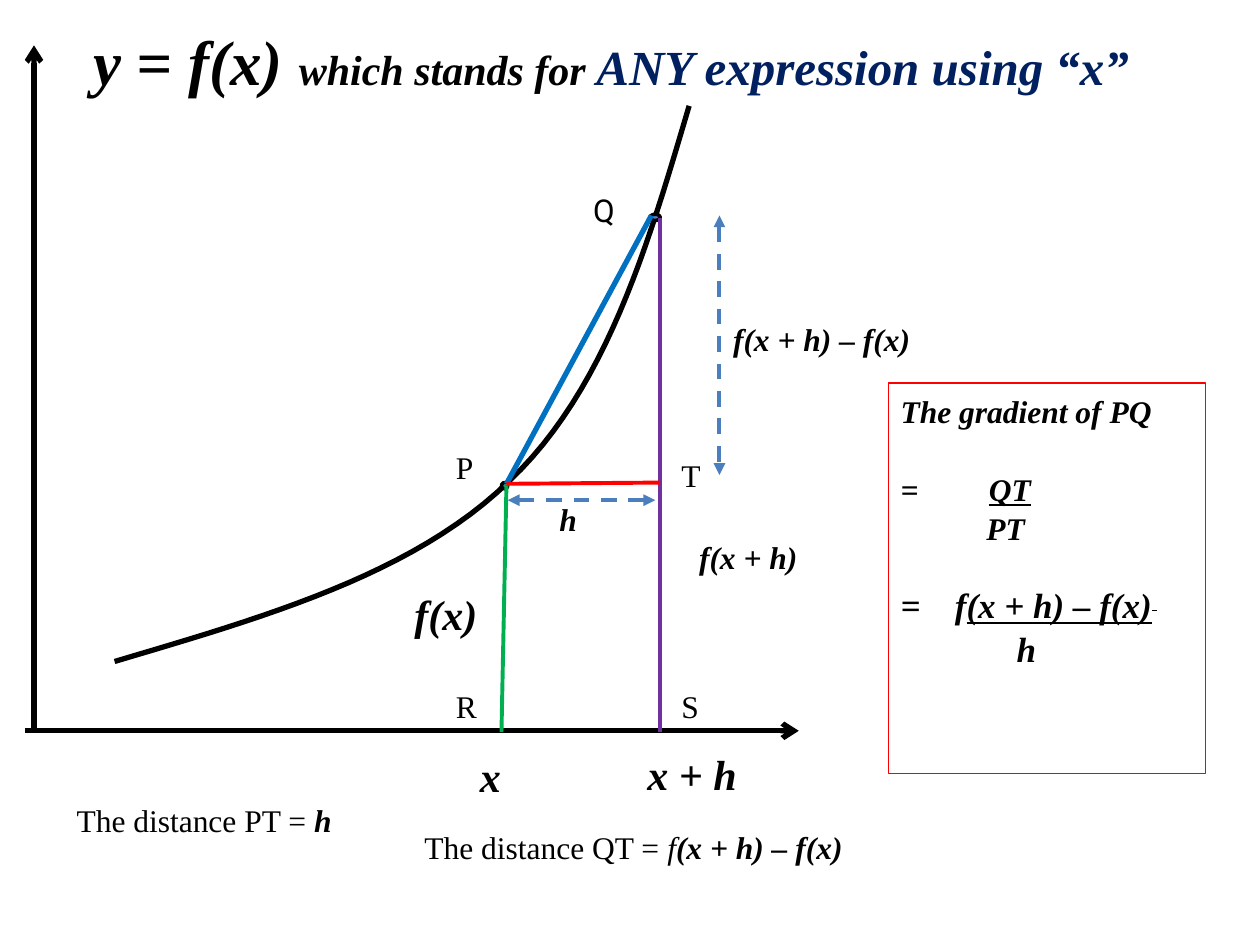
from lxml import etree
from pptx import Presentation
from pptx import util as u
from pptx.dml.color import RGBColor
from pptx.enum import dml, shapes, text
from pptx.oxml.ns import qn

BLACK = RGBColor(0x00, 0x00, 0x00)
NAVY = RGBColor(0x00, 0x20, 0x60)
BLUE = RGBColor(0x00, 0x70, 0xC0)
GREEN = RGBColor(0x00, 0xB0, 0x50)
PURPLE = RGBColor(0x70, 0x30, 0xA0)
RED = RGBColor(0xFF, 0x00, 0x00)
STEEL = RGBColor(0x4B, 0x7E, 0xBC)
DOT_FILL = RGBColor(0x4F, 0x81, 0xBD)

BOLD_ITALIC = {"bold": True, "italic": True}


def bezier(p0, p1, p2, p3, steps=24):
    """Points along a cubic curve, without its start point."""
    points = []
    for step in range(1, steps + 1):
        t = step / steps
        weights = ((1 - t) ** 3, 3 * t * (1 - t) ** 2, 3 * t * t * (1 - t), t ** 3)
        points.append(tuple(sum(w * p[axis] for w, p in zip(weights, (p0, p1, p2, p3)))
                            for axis in (0, 1)))
    return points


class Diagram:
    font = "Times New Roman"
    size = 18

    def __init__(self, slide):
        self.slide = slide

    def frame(self, owner, top_inset=0.05):
        body = owner.text_frame
        settings = {"word_wrap": True, "auto_size": text.MSO_AUTO_SIZE.NONE,
                    "vertical_anchor": text.MSO_ANCHOR.TOP,
                    "margin_left": u.Inches(0.1), "margin_right": u.Inches(0.1),
                    "margin_top": u.Inches(top_inset), "margin_bottom": u.Inches(0.05)}
        for name, value in settings.items():
            setattr(body, name, value)
        return body

    def add_runs(self, paragraph, *runs):
        """Add (wording, format) runs; a format may hold color and baseline."""
        paragraph.alignment = text.PP_ALIGN.LEFT
        for wording, changes in runs:
            style = {"name": self.font, "size": self.size, "color": BLACK,
                     "bold": False, "italic": False, **changes}
            run = paragraph.add_run()
            run.text = wording
            run.font.color.rgb = style.pop("color")
            style["size"] = u.Pt(style["size"])
            baseline = style.pop("baseline", None)
            for name, value in style.items():
                setattr(run.font, name, value)
            if baseline:
                run._r.get_or_add_rPr().set("baseline", str(baseline))

    def title(self, at, *runs):
        heading = self.slide.shapes.title
        for name, value in zip(("left", "top", "width", "height"), at):
            setattr(heading, name, u.Inches(value))
        self.add_runs(self.frame(heading).paragraphs[0], *runs)

    def label(self, at, *runs):
        box = self.slide.shapes.add_textbox(*map(u.Inches, at))
        self.add_runs(self.frame(box).paragraphs[0], *runs)

    def shape(self, kind, at, line, width, fill=None):
        item = self.slide.shapes.add_shape(kind, *map(u.Inches, at))
        self.outline(item, line, width, fill)
        return item

    def outline(self, item, line, width, fill=None):
        item.shadow.inherit = False
        item.line.color.rgb = line
        item.line.width = u.Pt(width)
        if fill is None:
            item.fill.background()
        else:
            item.fill.solid()
            item.fill.fore_color.rgb = fill

    def curve(self, points, line, width):
        start, *rest = points
        builder = self.slide.shapes.build_freeform(
            u.Inches(start[0]), u.Inches(start[1]))
        builder.add_line_segments(
            [(u.Inches(x), u.Inches(y)) for x, y in rest], close=False)
        self.outline(builder.convert_to_shape(), line, width)

    def line(self, start, end, color, width, dashed=False, **ends):
        """Straight line; ends may give headEnd and tailEnd arrow types."""
        connector = self.slide.shapes.add_connector(
            shapes.MSO_CONNECTOR.STRAIGHT, *map(u.Inches, (*start, *end)))
        connector.line.color.rgb = color
        connector.line.width = u.Pt(width)
        if dashed:
            connector.line.dash_style = dml.MSO_LINE.DASH
        properties = connector._element.spPr
        outline = properties.find(qn("a:ln"))
        for tag in ("headEnd", "tailEnd"):
            if tag in ends:
                etree.SubElement(outline, qn(f"a:{tag}"), type=ends[tag])
        etree.SubElement(properties, qn("a:effectLst"))

    def working(self, at, lines):
        """Framed box of (space before, indent, hanging, runs) lines."""
        box = self.shape(shapes.MSO_SHAPE.RECTANGLE, at, RED, 0.75)
        body = self.frame(box, top_inset=0.07)
        for number, (space, indent, hanging, runs) in enumerate(lines):
            paragraph = body.add_paragraph() if number else body.paragraphs[0]
            self.add_runs(paragraph, *runs)
            paragraph.space_before = u.Pt(space)
            properties = paragraph._p.get_or_add_pPr()
            properties.set("marL", str(u.Inches(indent)))
            properties.set("indent", str(-u.Inches(indent) if hanging else 0))


def main():
    deck = Presentation()
    deck.slide_width, deck.slide_height = u.Inches(10), u.Inches(7.5)
    diagram = Diagram(deck.slides.add_slide(deck.slide_layouts[5]))

    diagram.title((0.64, 0.13, 8.92, 0.71),
                  ("y = f(x) ", {**BOLD_ITALIC, "size": 36}),
                  ("which stands for ", {**BOLD_ITALIC, "size": 24}),
                  ("ANY expression using “x”",
                   {**BOLD_ITALIC, "size": 28, "color": NAVY}))

    start, middle, finish = (0.91, 5.25), (4.04, 3.82), (5.47, 0.84)
    diagram.curve([start,
                   *bezier(start, (2.09, 4.9), (3.28, 4.56), middle),
                   *bezier(middle, (4.81, 3.09), (5.14, 1.96), finish)], BLACK, 3)

    diagram.line((0.2, 5.8), (6.34, 5.8), BLACK, 3, tailEnd="arrow")
    diagram.line((0.27, 5.81), (0.27, 0.36), BLACK, 3, tailEnd="arrow")

    for dot in ((3.98, 3.83, 0.05, 0.05), (5.16, 1.7, 0.08, 0.05)):
        diagram.shape(shapes.MSO_SHAPE.OVAL, dot, BLACK, 2, DOT_FILL)

    point_p = (4.02, 3.84)
    diagram.line(point_p, (5.17, 1.71), BLUE, 3)
    diagram.line(point_p, (3.98, 5.81), GREEN, 2.25)
    diagram.line((5.24, 1.73), (5.24, 5.81), PURPLE, 2.25)
    diagram.line(point_p, (5.24, 3.83), RED, 2.25)
    for near, far in (((5.71, 1.71), (5.71, 3.77)), ((4.03, 3.97), (5.2, 3.97))):
        diagram.line(near, far, STEEL, 2.25, dashed=True,
                     headEnd="triangle", tailEnd="triangle")

    for name, left, top in (("P", 3.52, 3.51), ("R", 3.52, 5.4),
                            ("S", 5.31, 5.4), ("T", 5.31, 3.57)):
        diagram.label((left, top, 0.39, 0.4), (name, {}))
    diagram.label((4.61, 1.47, 0.55, 0.4), ("Q", {"name": "Roboto"}))

    for wording, size, at in (("x", 24, (3.71, 5.91, 0.5, 0.51)),
                              ("x + h", 24, (5.04, 5.89, 1.22, 0.5)),
                              ("f(x)", 24, (3.19, 4.62, 0.72, 0.51)),
                              ("f(x + h)", 18, (5.45, 4.22, 1.2, 0.4)),
                              ("f(x + h) – f(x)", 18, (5.72, 2.49, 1.8, 0.4)),
                              ("h", 18, (4.34, 3.92, 0.51, 0.4))):
        diagram.label(at, (wording, {**BOLD_ITALIC, "size": size}))

    large = {**BOLD_ITALIC, "size": 20}
    diagram.working((7.05, 3.04, 2.52, 3.1), [
        (0, 0, False, [("The gradient of PQ", BOLD_ITALIC)]),
        (23, 0.7, True, [("=\t", BOLD_ITALIC),
                         ("QT", {**BOLD_ITALIC, "underline": True})]),
        (1, 0.68, False, [("PT", BOLD_ITALIC)]),
        (21, 0.43, True, [("=\tf", large),
                          ("(x + h) – f(x)", {**large, "underline": True}),
                          (" ", {**large, "underline": True, "baseline": 30000})]),
        (1, 0.92, False, [("h", large)]),
    ])

    diagram.label((0.51, 6.31, 2.36, 0.71),
                  ("The distance PT = ", {}), ("h", BOLD_ITALIC))
    diagram.label((3.27, 6.52, 3.62, 0.4),
                  ("The distance QT = ", {}), ("f", {"italic": True}),
                  ("(x + h) – f(x)", BOLD_ITALIC))

    deck.save("out.pptx")


if __name__ == "__main__":
    main()
